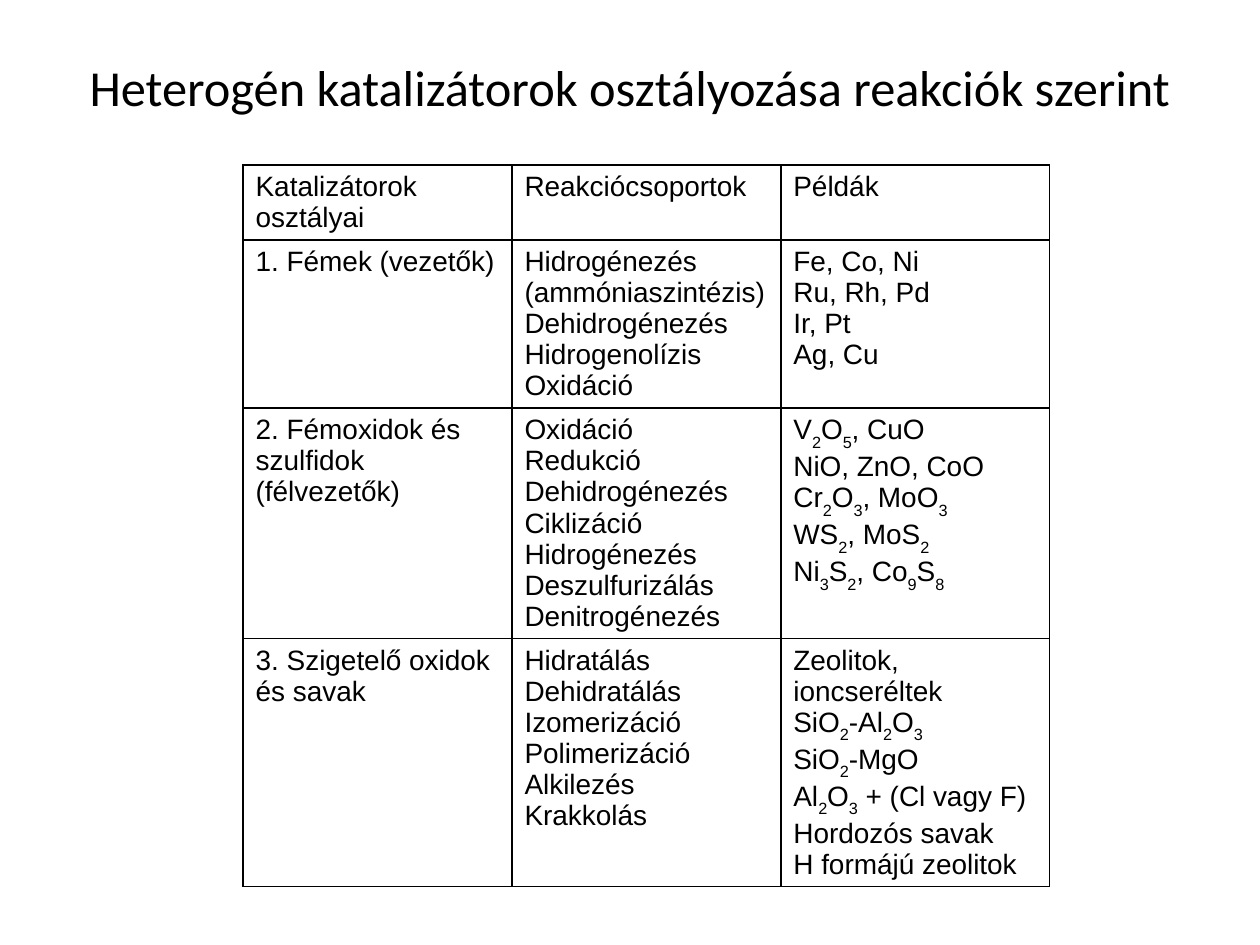
from dataclasses import dataclass
from itertools import groupby

from lxml.etree import SubElement
from pptx import Presentation
from pptx.dml.color import RGBColor as Rgb
from pptx.enum.text import MSO_ANCHOR as Anchor, MSO_AUTO_SIZE as Fit, PP_ALIGN as Align
from pptx.oxml.ns import qn
from pptx.util import Cm, Pt


@dataclass(frozen=True)
class Theme:
    ink: str = "000000"
    head: str = "Calibri"
    body: str = "Arial"
    big: float = 28.8
    small: float = 16
    line: float = 1


THEME = Theme()
TITLE = "Heterogén katalizátorok osztályozása reakciók szerint"
# Each cell lists its paragraphs
ROWS = [
    [["Katalizátorok osztályai"], ["Reakciócsoportok"], ["Példák"]],
    [["1. Fémek (vezetők)"],
     ["Hidrogénezés (ammóniaszintézis)", "Dehidrogénezés", "Hidrogenolízis",
      "Oxidáció"],
     ["Fe, Co, Ni", "Ru, Rh, Pd", "Ir, Pt", "Ag, Cu"]],
    [["2. Fémoxidok és szulfidok (félvezetők)"],
     ["Oxidáció", "Redukció", "Dehidrogénezés", "Ciklizáció", "Hidrogénezés",
      "Deszulfurizálás", "Denitrogénezés"],
     ["V2O5, CuO", "NiO, ZnO, CoO", "Cr2O3, MoO3", "WS2, MoS2", "Ni3S2, Co9S8"]],
    [["3. Szigetelő oxidok és savak"],
     ["Hidratálás", "Dehidratálás", "Izomerizáció", "Polimerizáció", "Alkilezés",
      "Krakkolás"],
     ["Zeolitok, ioncseréltek", "SiO2-Al2O3", "SiO2-MgO", "Al2O3 + (Cl vagy F)",
      "Hordozós savak", "H formájú zeolitok"]],
]
HEIGHTS = [0.84, 2.62, 4.39, 3.81]
WIDTH = 5.42


def write(frame, lines, font=THEME.body, size=THEME.small, color=THEME.ink,
          align=Align.LEFT):
    """Fill a frame; digits inside a formula become subscripts."""
    for i, line in enumerate(lines):
        para = frame.add_paragraph() if i else frame.paragraphs[0]
        para.alignment = align
        for j, (digit, chars) in enumerate(groupby(line, str.isdigit)):
            run = para.add_run()
            run.text = "".join(chars)
            run.font.name = font
            run.font.size = Pt(size)
            run.font.color.rgb = Rgb.from_string(color)
            if digit and j:
                run.font._element.set("baseline", "-30000")


def border(cell):
    props = cell._tc.get_or_add_tcPr()
    for i, side in enumerate(("lnL", "lnR", "lnT", "lnB")):
        line = SubElement(props, qn(f"a:{side}"), w=str(Pt(THEME.line)))
        fill = SubElement(line, qn("a:solidFill"))
        SubElement(fill, qn("a:srgbClr"), val=THEME.ink)
        props.insert(i, line)


def add_title(slide):
    title = slide.shapes.title
    title.left, title.top = Cm(1.27), Cm(0.76)
    title.width, title.height = Cm(22.86), Cm(1.96)
    frame = title.text_frame
    frame.auto_size = Fit.NONE
    frame.word_wrap = True
    frame.vertical_anchor = Anchor.MIDDLE
    write(frame, [TITLE], font=THEME.head, size=THEME.big, align=Align.CENTER)


def add_grid(slide):
    cols = len(ROWS[0])
    table = slide.shapes.add_table(len(ROWS), cols, Cm(4.9), Cm(3.33),
                                   Cm(WIDTH * cols), Cm(sum(HEIGHTS))).table
    table.first_row = table.horz_banding = False
    for col in table.columns:
        col.width = Cm(WIDTH)
    for row, height, data in zip(table.rows, HEIGHTS, ROWS):
        row.height = Cm(height)
        for cell, lines in zip(row.cells, data):
            cell.fill.background()
            border(cell)
            write(cell.text_frame, lines)


def main():
    deck = Presentation()
    deck.slide_width, deck.slide_height = Cm(25.4), Cm(19.05)
    slide = deck.slides.add_slide(deck.slide_layouts[5])  # title only
    add_title(slide)
    add_grid(slide)
    deck.save("out.pptx")


if __name__ == "__main__":
    main()
